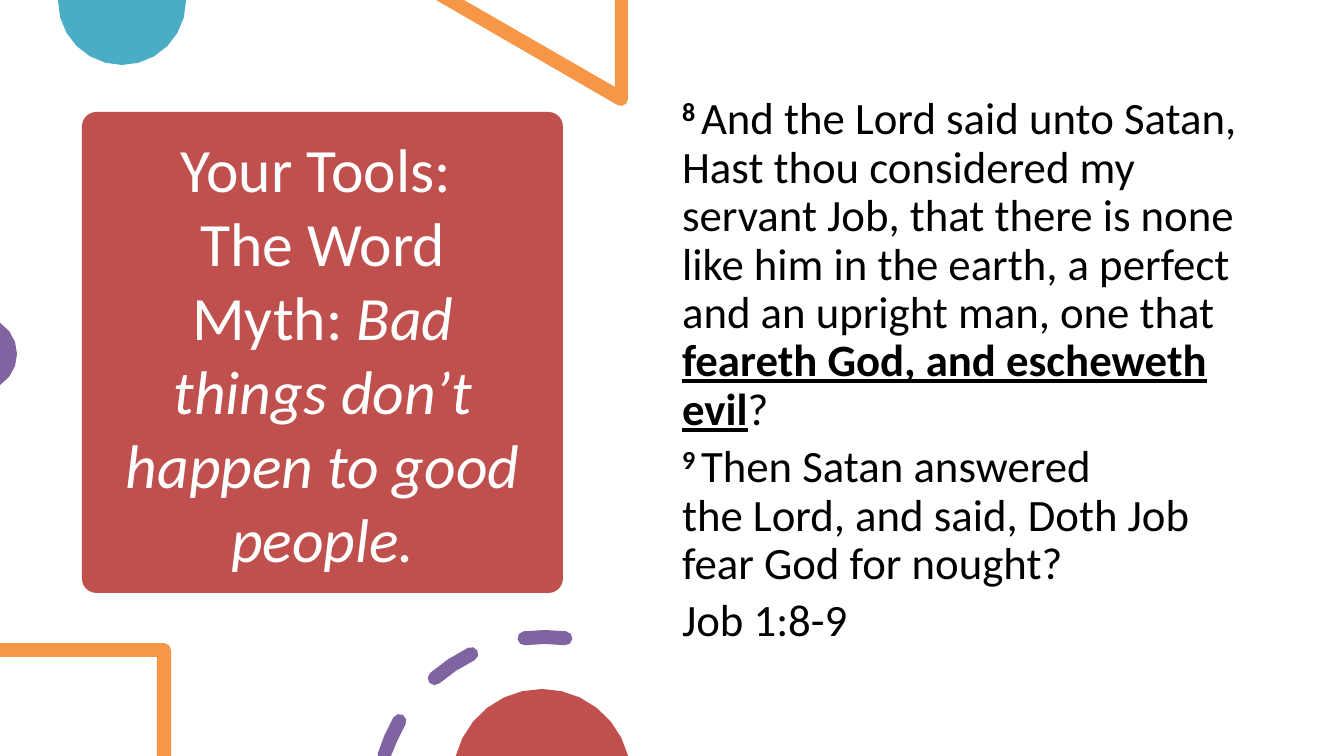
"""Build a scripture slide with a red title card, verse text and geometric accents."""
from math import ceil, cos, radians, sin, sqrt

from pptx import Presentation
from pptx.dml.color import RGBColor
from pptx.enum.shapes import MSO_SHAPE
from pptx.enum.text import MSO_ANCHOR, MSO_AUTO_SIZE, PP_ALIGN
from pptx.oxml.xmlchemy import OxmlElement
from pptx.util import Pt

ROUNDED_RECTANGLE = MSO_SHAPE.ROUNDED_RECTANGLE
MIDDLE, TOP = MSO_ANCHOR.MIDDLE, MSO_ANCHOR.TOP
SHRINK, FIXED = MSO_AUTO_SIZE.TEXT_TO_FIT_SHAPE, MSO_AUTO_SIZE.NONE
CENTER = PP_ALIGN.CENTER

PX = 914400 / 100.8
WIDTH, HEIGHT = 1344, 756
FONT = "Calibri"
HARD_SPACE = chr(160)
RED, TEAL, ORANGE, PURPLE = "C0504D", "4BACC6", "F79646", "8064A2"
WHITE, BLACK = "FFFFFF", "000000"


def paint(shape, color):
    shape.shadow.inherit = False
    shape.fill.solid()
    shape.fill.fore_color.rgb = RGBColor.from_string(color)
    shape.line.fill.background()


def arc(center_x, center_y, radius, start, end):
    steps = ceil(abs(end - start) * sqrt(radius) / 120)
    angles = [radians(start + (end - start) * step / steps) for step in range(steps + 1)]
    return [(center_x + radius * cos(angle), center_y + radius * sin(angle)) for angle in angles]


presentation = Presentation()
presentation.slide_width = round(WIDTH * PX)
presentation.slide_height = round(HEIGHT * PX)
slide = presentation.slides.add_slide(presentation.slide_layouts[1])
title, body = slide.shapes.title, slide.placeholders[1]

for placeholder, box, anchor, fit in (
    (title, (106, 123, 434, 460), MIDDLE, SHRINK),
    (body, (672, 91, 580, 539), TOP, FIXED),
):
    placeholder.left, placeholder.top, placeholder.width, placeholder.height = (
        round(length * PX) for length in box
    )
    placeholder.text_frame.word_wrap = True
    placeholder.text_frame.auto_size = fit
    placeholder.text_frame.vertical_anchor = anchor

card = slide.shapes.add_shape(
    ROUNDED_RECTANGLE, *(round(length * PX) for length in (82, 112, 481, 481))
)
card.adjustments[0] = 0.03
paint(card, RED)
title.element.addprevious(card.element)

title_paragraph = title.text_frame.paragraphs[0]
title_paragraph.alignment = CENTER
for text, italic, line_break in (
    ("Your Tools: ", False, True),
    ("The Word", False, True),
    ("Myth: ", False, False),
    ("Bad things don’t happen to good people.", True, False),
):
    run = title_paragraph.add_run()
    run.text = text
    run.font.name, run.font.size, run.font.italic = FONT, Pt(44), italic
    run.font.color.rgb = RGBColor.from_string(WHITE)
    if line_break:
        title_paragraph.add_line_break()

lord = HARD_SPACE.join(("the", "Lord"))
verses = [
    [
        ("8" + HARD_SPACE, "number"),
        (
            f"And {lord}{HARD_SPACE}said unto Satan, Hast thou considered my servant Job, "
            "that there is none like him in the earth, a perfect and an upright man, one that ",
            "plain",
        ),
        ("feareth God, and escheweth evil", "emphasis"),
        ("?", "plain"),
    ],
    [
        ("9" + HARD_SPACE, "number"),
        (f"Then Satan answered {lord}, and said, Doth Job fear God for nought?", "plain"),
    ],
    [("Job 1:8-9", "plain")],
]
for index, verse in enumerate(verses):
    frame = body.text_frame
    paragraph = frame.add_paragraph() if index else frame.paragraphs[0]
    paragraph.line_spacing = 0.9
    properties = paragraph._p.get_or_add_pPr()
    properties.set("marL", "0")
    properties.set("indent", "0")
    properties.append(OxmlElement("a:buNone"))
    for text, style in verse:
        run = paragraph.add_run()
        run.text = text
        run.font.name, run.font.size = FONT, Pt(32)
        run.font.bold = style != "plain"
        run.font.underline = style == "emphasis"
        run.font.color.rgb = RGBColor.from_string(BLACK)
        if style == "number":
            run._r.get_or_add_rPr().set("baseline", "30000")

ring_x, ring_y, ring_radius, half_stroke = 545, 805, 168, 7
dashes = []
for start, end in ((197, 210), (229, 244), (263, 277)):
    centerline = arc(ring_x, ring_y, ring_radius, start, end)
    outline = (
        arc(ring_x, ring_y, ring_radius + half_stroke, start, end)
        + arc(*centerline[-1], half_stroke, end, end + 180)[1:-1]
        + arc(ring_x, ring_y, ring_radius - half_stroke, end, start)
        + arc(*centerline[0], half_stroke, start + 180, start + 360)[1:-1]
    )
    dashes.append([(x, min(y, HEIGHT)) for x, y in outline])

teal_circle = [(186, 0)] + arc(122, 1, 64, 0, 180) + [(58, 0)]
orange_triangle = [(615, 0), (615, 87), (464, 0), (436, 0)] + arc(621, 99, 7, 120, 0) + [(628, 0)]
purple_circle = arc(-20, 354, 37, -57, 57)
orange_square = (
    [(0, 643)] + arc(164, 650, 7, 270, 360)
    + [(171, HEIGHT), (157, HEIGHT), (157, 657), (0, 657)]
)
red_circle = arc(542, 778, 89, 194, 346)

for contours, color in (
    ([teal_circle], TEAL),
    ([orange_triangle], ORANGE),
    ([purple_circle], PURPLE),
    ([orange_square], ORANGE),
    (dashes, PURPLE),
    ([red_circle], RED),
):
    builder = None
    for contour in contours:
        points = [(round(x * PX), round(y * PX)) for x, y in contour]
        if builder is None:
            builder = slide.shapes.build_freeform(*points[0])
        else:
            builder.move_to(*points[0])
        builder.add_line_segments(points[1:], close=True)
    paint(builder.convert_to_shape(), color)

presentation.save("out.pptx")
